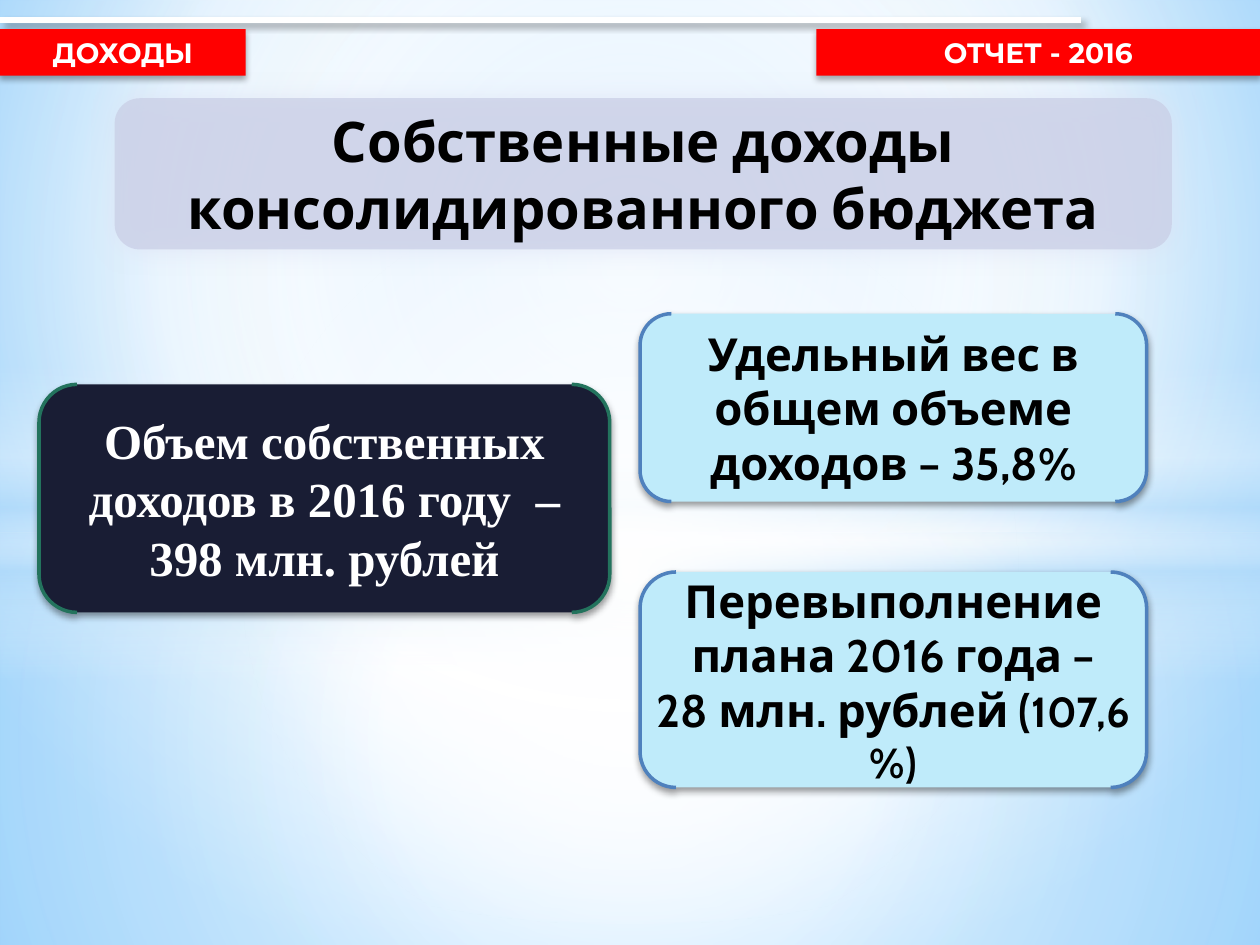
"""Build the slide on own revenues of the consolidated budget."""
from dataclasses import dataclass

from lxml import etree
from pptx import Presentation
from pptx import util as u
from pptx.dml.color import RGBColor
from pptx.enum import shapes, text
from pptx.oxml import ns


@dataclass(frozen=True)
class Theme:
    """Colours, fonts and type sizes of the slide."""

    white: str = "FFFFFF"
    black: str = "000000"
    sky: str = "B4DCFA"
    red: str = "FF0000"
    lilac: str = "C8CDE5"
    glow: str = "DCE1F4"
    navy: str = "191D34"
    green: str = "23735D"
    ice: str = "BFEBFA"
    blue: str = "4F81BD"
    heading: str = "Cabin"
    label: str = "Montserrat"
    serif: str = "Times New Roman"
    title_size: int = 32
    total_size: int = 28
    card_size: int = 26
    note_size: int = 24
    tag_size: int = 16


T = Theme()
SLIDE_W, SLIDE_H = u.Inches(10), u.Inches(7.5)
CENTRE = (50, 50, 50, 50)
CARD_SHADOW = (T.black, 40, 4, 2, 90)
TAG_SHADOW = (T.black, 32, 3.5, 2.2, 90)


def share(x, y, w, h):
    """Turn percentages of the slide into a box."""
    return [int(size * pct / 100) for size, pct in zip((SLIDE_W, SLIDE_H) * 2, (x, y, w, h))]


def add_child(parent, tag, **attrs):
    """Append a drawing element with the given attributes."""
    return etree.SubElement(parent, ns.qn(tag), {k: str(v) for k, v in attrs.items()})


def add_colour(parent, rgb, opacity=100):
    """Append a colour with its opacity in percent."""
    clr = add_child(parent, "a:srgbClr", val=rgb)
    add_child(clr, "a:alpha", val=opacity * 1000)


def set_gradient(owner, stops, focus=None):
    """Give a slide background or shape a radial or top-down gradient."""
    owner.fill.solid()
    solid = next(owner._element.iter(ns.qn("a:solidFill")))
    grad = etree.Element(ns.qn("a:gradFill"), rotWithShape="1")
    stop_list = add_child(grad, "a:gsLst")
    for pos, *colour in stops:
        add_colour(add_child(stop_list, "a:gs", pos=pos * 1000), *colour)
    if focus:
        sides = dict(zip("ltrb", (side * 1000 for side in focus)))
        add_child(add_child(grad, "a:path", path="circle"), "a:fillToRect", **sides)
    else:
        add_child(grad, "a:lin", ang=90 * 60000, scaled=0)
    solid.getparent().replace(solid, grad)


def set_shadow(sp, rgb, opacity, blur, dist, angle):
    """Give a shape or line an outer shadow."""
    effects = add_child(sp._element.spPr, "a:effectLst")
    outer = add_child(effects, "a:outerShdw", blurRad=u.Pt(blur), dist=u.Pt(dist),
                      dir=angle * 60000, algn="ctr", rotWithShape=0)
    add_colour(outer, rgb, opacity)


def add_glow(s, kind, box, stops, focus=CENTRE):
    """Add a translucent backdrop shape."""
    sp = s.shapes.add_shape(kind, *share(*box))
    set_gradient(sp, stops, focus)
    sp.line.fill.background()
    sp.shadow.inherit = False


def add_panel(s, kind, box, fill, shadow, line=None, opacity=100):
    """Add a filled panel with a shadow."""
    sp = s.shapes.add_shape(kind, *share(*box))
    sp.fill.solid()
    sp.fill.fore_color.rgb = RGBColor.from_string(fill)
    if opacity < 100:
        add_child(next(sp._element.spPr.iter(ns.qn("a:srgbClr"))), "a:alpha", val=opacity * 1000)
    if line:
        sp.line.color.rgb = RGBColor.from_string(line)
        sp.line.width = u.Pt(2)
    else:
        sp.line.fill.background()
    set_shadow(sp, *shadow)
    return sp


def set_text(sp, paragraphs, font, size, colour, inset=0):
    """Write bold centred paragraphs, each a list of (text, size) runs."""
    tf = sp.text_frame
    tf.word_wrap = True
    tf.auto_size = text.MSO_AUTO_SIZE.NONE
    tf.vertical_anchor = text.MSO_ANCHOR.MIDDLE
    tf.margin_left = tf.margin_right = tf.margin_top = tf.margin_bottom = u.Inches(inset)
    for i, runs in enumerate(paragraphs):
        p = tf.add_paragraph() if i else tf.paragraphs[0]
        p.alignment = text.PP_ALIGN.CENTER
        for words, run_size in runs:
            r = p.add_run()
            r.text = words
            r.font.name, r.font.size, r.font.bold = font, u.Pt(run_size or size), True
            r.font.color.rgb = RGBColor.from_string(colour)


def add_backdrop(s):
    """Paint the sky background and its layers of light."""
    rect, oval = shapes.MSO_SHAPE.RECTANGLE, shapes.MSO_SHAPE.OVAL
    set_gradient(s.background, [(0, "9ED5FF"), (60, T.white), (100, "5BB9FF")], (20, 10, 20, 60))
    add_glow(s, rect, (0, 56.4, 100, 43.6), [(0, T.white, 91), (37, T.white, 76), (100, T.sky, 79)])
    add_glow(s, rect, (0, 0, 100, 56.4), [(0, T.white, 89), (48, T.white, 62), (100, T.sky, 79)])
    add_glow(s, rect, (0, 38.67, 100, 33.33),
             [(0, T.white, 0), (29, T.white, 30), (45, T.sky, 40),
              (55, T.white, 26), (65, T.sky, 60), (100, T.white, 0)], None)
    add_glow(s, oval, (0, 23.33, 100, 74.4), [(0, T.white), (54, T.white, 0)])


def add_rule(s):
    """Add the white rule along the top."""
    x, y, w, _ = share(0, 2.13, 85.8, 0)
    line = s.shapes.add_connector(shapes.MSO_CONNECTOR.STRAIGHT, x, y, x + w, y)
    line.line.color.rgb = RGBColor.from_string(T.white)
    line.line.width = u.Pt(3)
    set_shadow(line, T.black, 40, 4, 3, 45)


def add_tag(s, x, w, words):
    """Add a red label below the top rule."""
    sp = add_panel(s, shapes.MSO_SHAPE.RECTANGLE, (x, 3.07, w, 4.93), T.red, TAG_SHADOW)
    set_text(sp, [[(words, None)]], T.label, T.tag_size, T.white, 0.05)


def add_card(s, box, fill, line, paragraphs, font, size, colour):
    """Add a bracketed card with its statement."""
    sp = add_panel(s, shapes.MSO_SHAPE.DOUBLE_BRACKET, box, fill, CARD_SHADOW, line)
    set_text(sp, paragraphs, font, size, colour)


def add_title(s, box, words):
    """Set the title placeholder over a pale panel."""
    add_panel(s, shapes.MSO_SHAPE.DOUBLE_BRACKET, box, T.lilac, (T.glow, 90, 15, 0, 45), opacity=70)
    title = s.shapes.title
    title.left, title.top, title.width, title.height = share(*box)
    set_text(title, [[(words, None)]], T.heading, T.title_size, T.black)
    s.shapes._spTree.append(title._element)


def main():
    """Build and save the slide."""
    prs = Presentation()
    prs.slide_width, prs.slide_height = SLIDE_W, SLIDE_H
    s = prs.slides.add_slide(prs.slide_layouts[5])
    add_backdrop(s)
    add_rule(s)
    add_tag(s, 64.8, 35.2, "ОТЧЕТ - 2016")
    add_title(s, (9.1, 10.4, 83.9, 16), "Собственные доходы консолидированного бюджета")
    add_tag(s, 0, 19.5, "ДОХОДЫ")
    add_card(s, (3.1, 40.67, 45.3, 24.13), T.navy, T.green,
             [[("Объем собственных доходов в 2016 году  – 398 млн. рублей", None)]],
             T.serif, T.total_size, T.white)
    add_card(s, (50.8, 60.53, 40.2, 22.8), T.ice, T.blue,
             [[("Перевыполнение плана 2016 года –", None)],
              [("28 млн. рублей (", None), ("107,6 %)", T.note_size)]],
             T.heading, T.card_size, T.black)
    add_card(s, (50.8, 33.2, 40.2, 19.87), T.ice, T.blue,
             [[("Удельный вес в общем объеме доходов – 35,8%", None)]],
             T.heading, T.card_size, T.black)
    prs.save("out.pptx")


if __name__ == "__main__":
    main()
